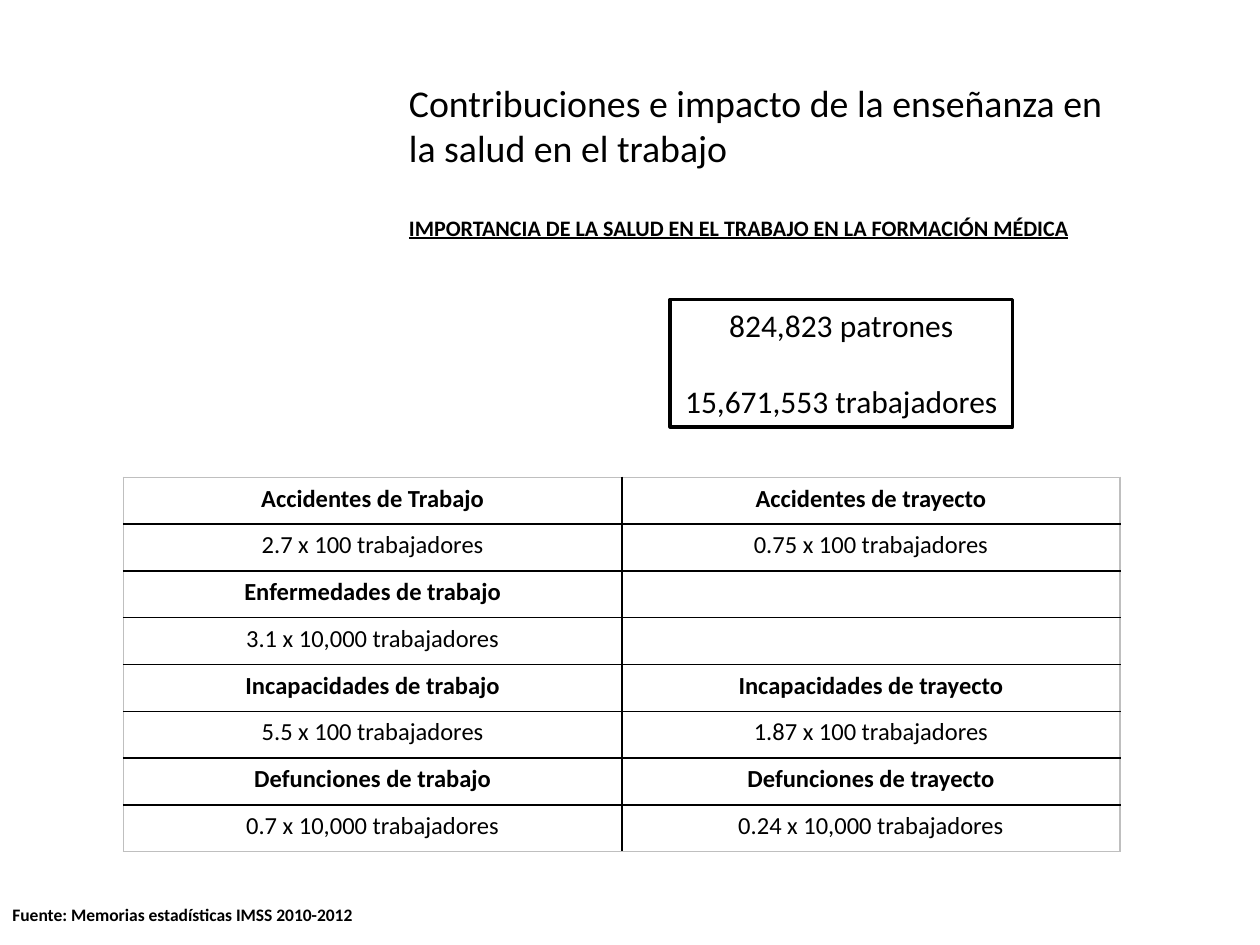
from pptx import Presentation
from pptx.dml.color import RGBColor
from pptx.enum.shapes import MSO_SHAPE
from pptx.enum.text import MSO_ANCHOR, PP_ALIGN
from pptx.oxml.xmlchemy import OxmlElement
from pptx.util import Pt

TITLE = [
    ("Contribuciones e impacto de la enseñanza en la salud en el trabajo", "title"),
    ("IMPORTANCIA DE LA SALUD EN EL TRABAJO EN LA FORMACIÓN MÉDICA", "subtitle"),
]
TOTALS = [("824,823 patrones", "total"), ("15,671,553 trabajadores", "total")]
SOURCE = [("Fuente: Memorias estadísticas IMSS 2010-2012", "source")]
RATES = [
    ("Accidentes de Trabajo", "Accidentes de trayecto"),
    ("2.7 x 100 trabajadores", "0.75 x 100 trabajadores"),
    ("Enfermedades de trabajo", ""),
    ("3.1 x 10,000 trabajadores", ""),
    ("Incapacidades de trabajo", "Incapacidades de trayecto"),
    ("5.5 x 100 trabajadores", "1.87 x 100 trabajadores"),
    ("Defunciones de trabajo", "Defunciones de trayecto"),
    ("0.7 x 10,000 trabajadores", "0.24 x 10,000 trabajadores"),
]

THEME = {
    "ink": "000000",
    "paper": "FFFFFF",
    "frame": "BFBFBF",
    "title": {"size": Pt(21.6)},
    "subtitle": {"size": Pt(12.6), "bold": True, "underline": True},
    "total": {"size": Pt(18)},
    "source": {"size": Pt(10), "bold": True},
    "heading": {"size": Pt(14), "bold": True},
    "rate": {"size": Pt(14), "bold": False},
}
INK = RGBColor.from_string(THEME["ink"])
PAPER = RGBColor.from_string(THEME["paper"])
ROW_H, COL_W = 26.75, 284.75


def write(tf, lines, align=PP_ALIGN.LEFT, gap=0):
    for i, (text, style) in enumerate(lines):
        p = tf.paragraphs[0] if i == 0 else tf.add_paragraph()
        p.alignment = align
        if i:
            p.space_before = Pt(gap)
        if text:
            r = p.add_run()
            r.text = text
            for key, value in {"name": "Calibri", **THEME[style]}.items():
                setattr(r.font, key, value)
            r.font.color.rgb = INK
        else:
            end = OxmlElement("a:endParaRPr")
            end.set("sz", str(int(THEME[style]["size"].pt * 100)))
            p._p.append(end)


def add_text(s, box, lines, wrap, gap=0):
    tf = s.shapes.add_textbox(*map(Pt, box)).text_frame
    tf.word_wrap = wrap
    write(tf, lines, gap=gap)


def set_borders(cell, row, col):
    outer = {"L": col == 0, "R": col == 1, "T": row == 0, "B": row == len(RATES) - 1}
    tcPr = cell._tc.get_or_add_tcPr()
    for i, (side, is_outer) in enumerate(outer.items()):
        ln = OxmlElement(f"a:ln{side}")
        ln.set("w", str(Pt(1)))
        fill = OxmlElement("a:solidFill")
        color = OxmlElement("a:srgbClr")
        color.set("val", THEME["frame" if is_outer else "ink"])
        fill.append(color)
        ln.append(fill)
        tcPr.insert(i, ln)


def add_totals(s):
    sp = s.shapes.add_shape(MSO_SHAPE.RECTANGLE, *map(Pt, (383, 171.2, 195.6, 72.7)))
    sp.shadow.inherit = False
    sp.fill.solid()
    sp.fill.fore_color.rgb = PAPER
    sp.line.color.rgb = INK
    sp.line.width = Pt(2)
    tf = sp.text_frame
    tf.word_wrap = False
    tf.vertical_anchor = MSO_ANCHOR.TOP
    write(tf, TOTALS, PP_ALIGN.CENTER, 22)


def add_rates(s):
    size = (2 * COL_W, len(RATES) * ROW_H)
    table = s.shapes.add_table(len(RATES), 2, *map(Pt, (70.6, 272.8, *size))).table
    for column in table.columns:
        column.width = Pt(COL_W)
    for i, values in enumerate(RATES):
        table.rows[i].height = Pt(ROW_H)
        for j, value in enumerate(values):
            cell = table.cell(i, j)
            cell.fill.background()
            set_borders(cell, i, j)
            style = "rate" if i % 2 else "heading"
            write(cell.text_frame, [(value, style)], PP_ALIGN.CENTER)


def main():
    prs = Presentation()
    prs.slide_width, prs.slide_height = Pt(720), Pt(540)
    s = prs.slides.add_slide(prs.slide_layouts[6])
    add_text(s, (226.6, 42, 424.8, 116), TITLE, True, 25)
    add_rates(s)
    add_totals(s)
    add_text(s, (0, 513.2, 212, 19.4), SOURCE, False)
    prs.save("out.pptx")


if __name__ == "__main__":
    main()
